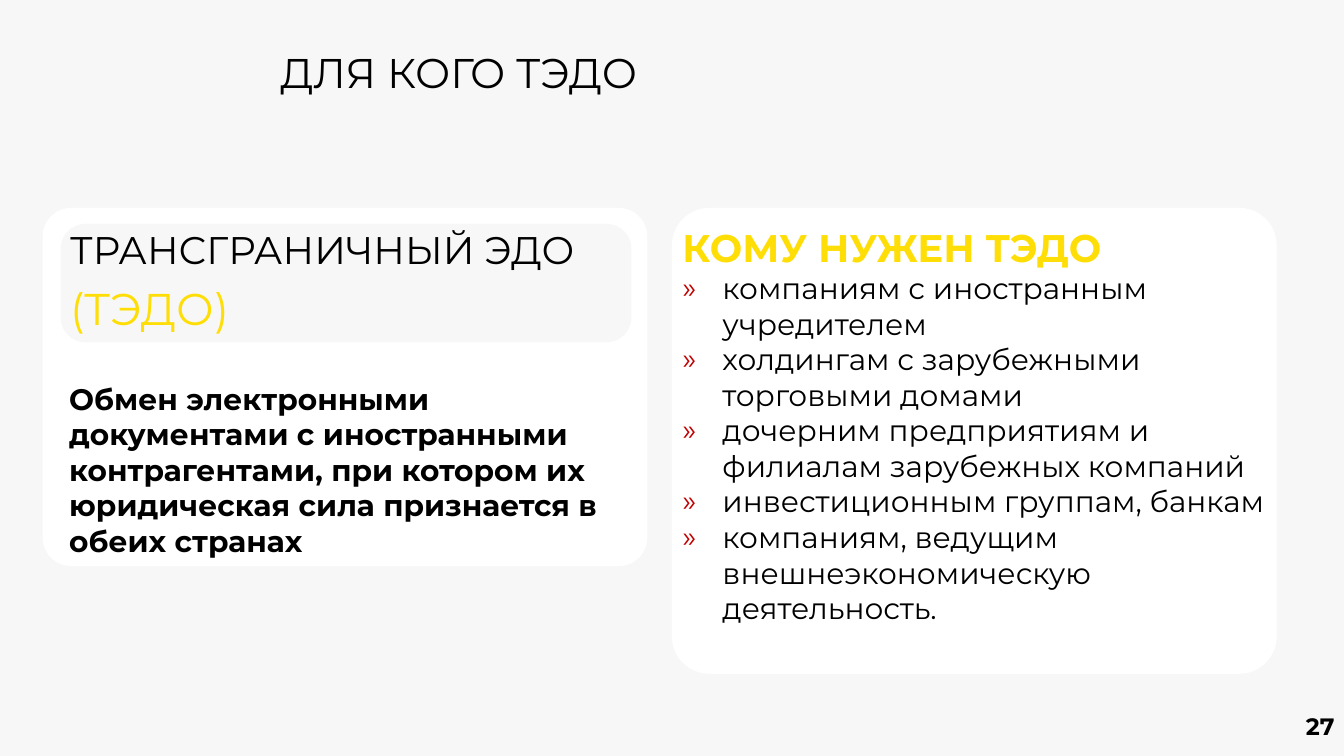
"""Builds the slide on who needs cross-border electronic document exchange."""
import pptx
import pptx.dml.color
import pptx.enum.shapes
import pptx.enum.text
import pptx.oxml
import pptx.oxml.ns
import pptx.util

Pt = pptx.util.Pt

TITLE = [("ДЛЯ КОГО ТЭДО", "title")]
TERM = [("ТРАНСГРАНИЧНЫЙ ЭДО", "heading"), ("(ТЭДО)", "abbreviation")]
DEFINITION = [(
    "Обмен электронными документами с иностранными контрагентами, "
    "при котором их юридическая сила признается в обеих странах", "strong")]
AUDIENCE = [("КОМУ НУЖЕН ТЭДО", "accent")] + [(line, "bullet") for line in (
    "компаниям с иностранным учредителем",
    "холдингам с зарубежными торговыми домами",
    "дочерним предприятиям и филиалам зарубежных компаний",
    "инвестиционным группам, банкам",
    "компаниям, ведущим внешнеэкономическую деятельность.",
)]
PAGE_NUMBER = [("27", "number")]

THEME = {
    "font": "Montserrat",
    "background": "F7F7F7",
    "card": "FFFFFF",
    "bullet": "C00000",
    "styles": {
        "title": (28, "000000", False),
        "heading": (26, "000000", False),
        "abbreviation": (30, "FFDE07", False),
        "accent": (26, "FFDE07", True),
        "strong": (20, "000000", True),
        "bullet": (20, "000000", False),
        "number": (16, "000000", True),
    },
}

SLIDE_WIDTH, SLIDE_HEIGHT = 907.2, 510.5
CARD_TOP, CARD_WIDTH = 140.4, 408.2
LEFT_CARD, RIGHT_CARD = 28.8, 453.6
INDENT = 27


def color(name):
    return pptx.dml.color.RGBColor.from_string(name)


def add_card(slide, left, top, width, height, fill, rounding):
    card = slide.shapes.add_shape(
        pptx.enum.shapes.MSO_SHAPE.ROUNDED_RECTANGLE,
        Pt(left), Pt(top), Pt(width), Pt(height))
    card.adjustments[0] = rounding
    card.shadow.inherit = False
    card.fill.solid()
    card.fill.fore_color.rgb = color(fill)
    card.line.fill.background()


def add_bullet(para):
    properties = para._p.get_or_add_pPr()
    properties.set("marL", str(Pt(INDENT)))
    properties.set("indent", str(-Pt(INDENT)))
    namespace = pptx.oxml.ns.nsdecls("a")
    for markup in (
        f'<a:buClr {namespace}><a:srgbClr val="{THEME["bullet"]}"/></a:buClr>',
        f'<a:buFont {namespace} typeface="{THEME["font"]}"/>',
        f'<a:buChar {namespace} char="»"/>',
    ):
        properties.append(pptx.oxml.parse_xml(markup))


def add_text(slide, left, top, width, height, lines, space_after=0):
    box = slide.shapes.add_textbox(Pt(left), Pt(top), Pt(width), Pt(height))
    frame = box.text_frame
    frame.word_wrap = True
    for index, (text, style) in enumerate(lines):
        para = frame.paragraphs[0] if index == 0 else frame.add_paragraph()
        para.text = text
        if style == "bullet":
            add_bullet(para)
        para.space_after = Pt(space_after)
        size, ink, bold = THEME["styles"][style]
        para.font.name = THEME["font"]
        para.font.size = Pt(size)
        para.font.bold = bold
        para.font.color.rgb = color(ink)
    return frame


def main():
    deck = pptx.Presentation()
    deck.slide_width, deck.slide_height = Pt(SLIDE_WIDTH), Pt(SLIDE_HEIGHT)
    slide = deck.slides.add_slide(deck.slide_layouts[6])
    slide.background.fill.solid()
    slide.background.fill.fore_color.rgb = color(THEME["background"])

    number = add_text(slide, 835.2, 475.2, 72.7, 27.4, PAGE_NUMBER)
    number.paragraphs[0].alignment = pptx.enum.text.PP_ALIGN.RIGHT
    number.paragraphs[0].line_spacing = 1.1

    add_card(slide, RIGHT_CARD, CARD_TOP, CARD_WIDTH, 314.6, THEME["card"], 0.08)
    add_card(slide, LEFT_CARD, CARD_TOP, CARD_WIDTH, 241.9, THEME["card"], 0.08)
    add_card(slide, 41, 151.2, 385.2, 79.9, THEME["background"], 0.21)

    add_text(slide, 40.3, 149, 384.5, 81.4, TERM, space_after=6)
    add_text(slide, 39.6, 253.4, 385.2, 128.2, DEFINITION)
    add_text(slide, RIGHT_CARD, 147.6, CARD_WIDTH, 307.4, AUDIENCE)

    title = add_text(slide, 182.2, 8.6, 475.9, 80.6, TITLE)
    title.vertical_anchor = pptx.enum.text.MSO_ANCHOR.MIDDLE

    deck.save("out.pptx")


if __name__ == "__main__":
    main()
